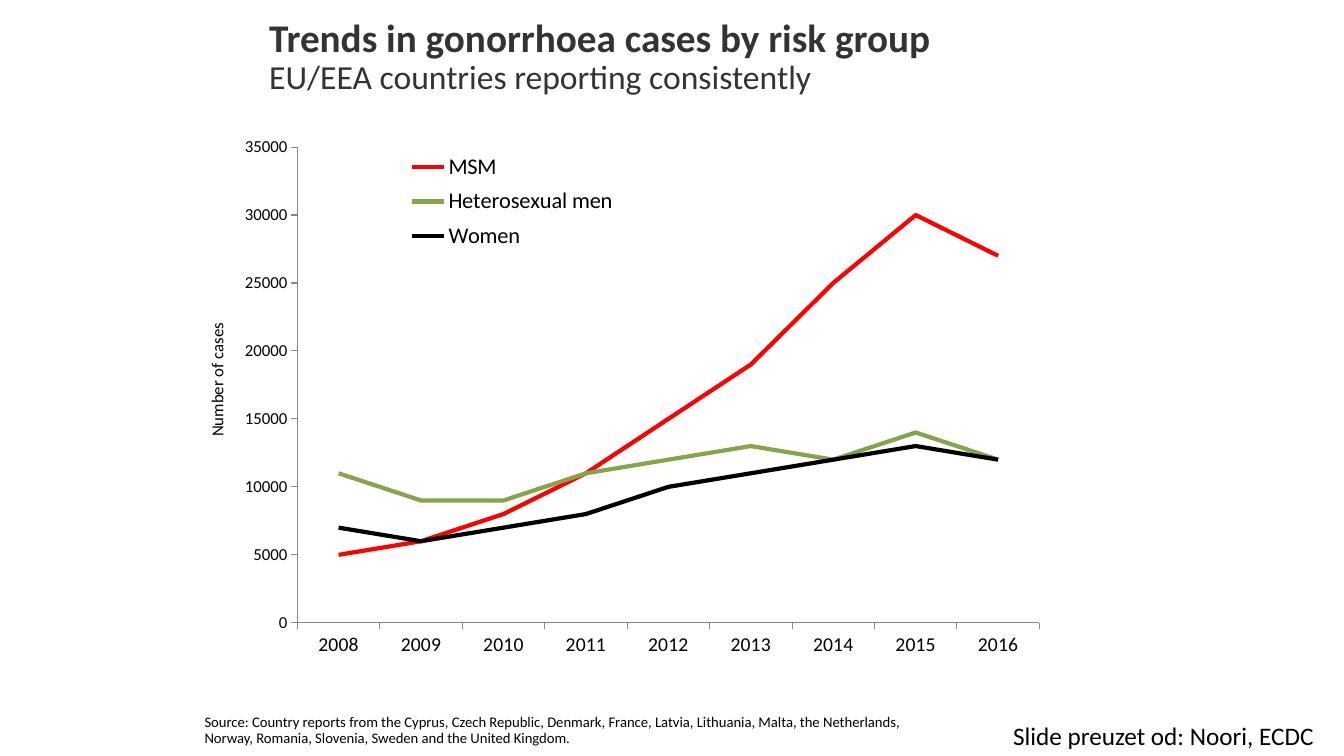
import pptx
import pptx.chart.data
import pptx.dml.color
import pptx.enum.chart
import pptx.enum.text
import pptx.oxml
import pptx.oxml.ns
import pptx.util
from pptx.util import Inches

FONT = "Calibri"
BLACK = pptx.dml.color.RGBColor(0x00, 0x00, 0x00)
TITLE_GRAY = pptx.dml.color.RGBColor(0x33, 0x33, 0x33)
AXIS_GRAY = pptx.dml.color.RGBColor(0x86, 0x86, 0x86)
RED = pptx.dml.color.RGBColor(0xFF, 0x00, 0x00)
GREEN = pptx.dml.color.RGBColor(0x86, 0xA4, 0x4A)
CHART_WIDTH, CHART_HEIGHT = 8.54, 5.6


def format_font(font, size, color=BLACK, bold=False):
    font.name = FONT
    font.size = pptx.util.Pt(size)
    font.color.rgb = color
    font.bold = bold


def write_text(paragraph, text, line_spacing=1.0, space_after=0, **font_format):
    paragraph.alignment = pptx.enum.text.PP_ALIGN.LEFT
    paragraph.line_spacing = line_spacing
    paragraph.space_before = pptx.util.Pt(0)
    paragraph.space_after = pptx.util.Pt(space_after)
    run = paragraph.add_run()
    run.text = text
    format_font(run.font, **font_format)


presentation = pptx.Presentation()
presentation.slide_width = Inches(13.33)
presentation.slide_height = Inches(7.5)
slide = presentation.slides.add_slide(presentation.slide_layouts.get_by_name("Title Only"))

# Title
title = slide.shapes.title
title.left, title.top = Inches(2.57), Inches(0.12)
title.width, title.height = Inches(7.73), Inches(0.9)
title_frame = title.text_frame
title_frame.auto_size = pptx.enum.text.MSO_AUTO_SIZE.NONE
title_frame.vertical_anchor = pptx.enum.text.MSO_ANCHOR.MIDDLE
write_text(title_frame.paragraphs[0], "Trends in gonorrhoea cases by risk group",
           line_spacing=0.9, size=28, color=TITLE_GRAY, bold=True)
write_text(title_frame.add_paragraph(), "EU/EEA countries reporting consistently",
           line_spacing=0.9, size=24, color=TITLE_GRAY)

# Chart
risk_groups = [
    ("MSM", RED, [5000, 6000, 8000, 11000, 15000, 19000, 25000, 30000, 27000]),
    ("Heterosexual men", GREEN,
     [11000, 9000, 9000, 11000, 12000, 13000, 12000, 14000, 12000]),
    ("Women", BLACK, [7000, 6000, 7000, 8000, 10000, 11000, 12000, 13000, 12000]),
]
chart_data = pptx.chart.data.CategoryChartData()
chart_data.categories = [str(year) for year in range(2008, 2017)]
for name, color, cases in risk_groups:
    chart_data.add_series(name, cases)
chart = slide.shapes.add_chart(
    pptx.enum.chart.XL_CHART_TYPE.LINE, Inches(1.93), Inches(1.27),
    Inches(CHART_WIDTH), Inches(CHART_HEIGHT), chart_data).chart
format_font(chart.font, size=18)
chart.has_title = False
chart.plots[0].vary_by_categories = False

for series, (name, color, cases) in zip(chart.plots[0].series, risk_groups):
    series.smooth = False
    series.marker.style = pptx.enum.chart.XL_MARKER_STYLE.NONE
    series.format.line.color.rgb = color
    series.format.line.width = pptx.util.Pt(3)

for axis, size in ((chart.category_axis, 14), (chart.value_axis, 12)):
    axis.has_major_gridlines = False
    axis.major_tick_mark = pptx.enum.chart.XL_TICK_MARK.OUTSIDE
    axis.minor_tick_mark = pptx.enum.chart.XL_TICK_MARK.NONE
    axis.format.line.color.rgb = AXIS_GRAY
    axis.format.line.width = pptx.util.Pt(0.75)
    format_font(axis.tick_labels.font, size=size)

value_axis = chart.value_axis
value_axis.minimum_scale = 0
value_axis.maximum_scale = 35000
value_axis.major_unit = 5000
value_axis.tick_labels.number_format = "0"
value_axis.tick_labels.number_format_is_linked = False
axis_title = value_axis.axis_title
axis_title.text_frame.text = "Number of cases"
format_font(axis_title.text_frame.paragraphs[0].runs[0].font, size=12)

chart.has_legend = True
legend = chart.legend
legend.position = pptx.enum.chart.XL_LEGEND_POSITION.RIGHT
legend.include_in_layout = False
format_font(legend.font, size=16)

# Fixed places of the chart parts: left, top, width, height in inches within the chart
plot_area = chart.plots[0]._element.getparent()
chart_parts = [
    (plot_area, None, '<c:layoutTarget val="inner"/>', (1.02, 0.19, 7.36, 4.72)),
    (legend._element, "c:legendPos", "", (2.0, 0.18, 2.3, 1.1)),
    (axis_title._element, "c:tx", "", (0.08, 1.9)),
]
for part, predecessor, layout_target, place in chart_parts:
    for old_layout in part.findall(pptx.oxml.ns.qn("c:layout")):
        part.remove(old_layout)
    modes = "".join(f'<c:{key}Mode val="edge"/>' for key in "xy")
    fractions = "".join(
        f'<c:{key} val="{length / whole:.4f}"/>'
        for key, length, whole in zip("xywh", place, (CHART_WIDTH, CHART_HEIGHT) * 2))
    layout = pptx.oxml.parse_xml(
        f'<c:layout {pptx.oxml.ns.nsdecls("c")}><c:manualLayout>'
        f"{layout_target}{modes}{fractions}</c:manualLayout></c:layout>")
    if predecessor:
        part.find(pptx.oxml.ns.qn(predecessor)).addnext(layout)
    else:
        part.insert(0, layout)

# Source and credit
captions = [
    ("Source: Country reports from the Cyprus, Czech Republic, Denmark, France, Latvia, "
     "Lithuania, Malta, the Netherlands, Norway, Romania, Slovenia, Sweden and the "
     "United Kingdom.",
     (1.93, 7.04, 7.29, 0.43), {"size": 10.5, "line_spacing": 0.9, "space_after": 4.5}),
    ("Slide preuzet od: Noori, ECDC", (9.95, 7.1, 3.39, 0.4), {"size": 18}),
]
for text, place, text_format in captions:
    text_frame = slide.shapes.add_textbox(*map(Inches, place)).text_frame
    text_frame.word_wrap = True
    write_text(text_frame.paragraphs[0], text, **text_format)

presentation.save("out.pptx")
